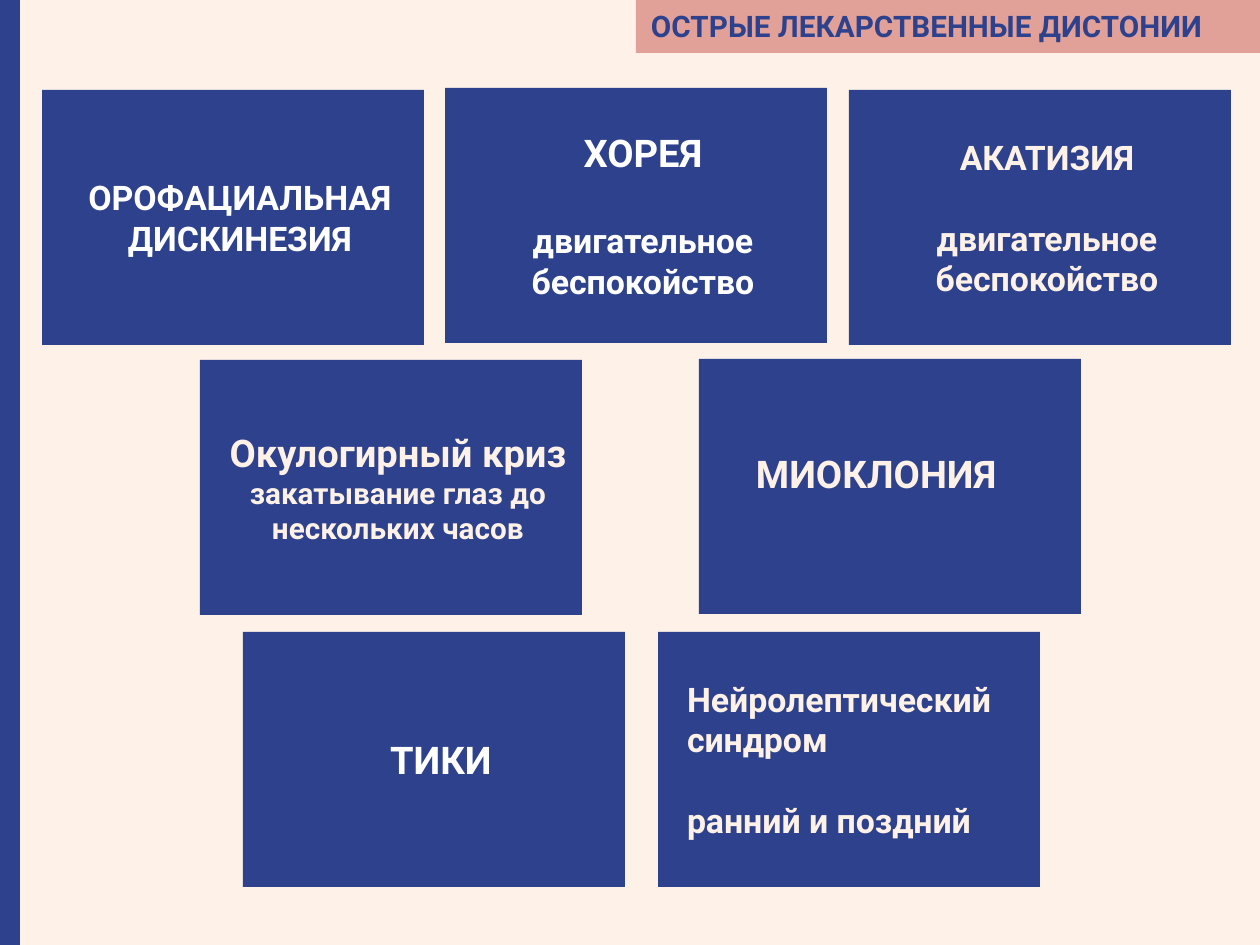
from pptx import Presentation
from pptx.dml.color import RGBColor
from pptx.enum.shapes import MSO_SHAPE
from pptx.enum.text import MSO_ANCHOR, PP_ALIGN
from pptx.util import Pt

PX = 6000
CARD_W, CARD_H = 382, 255
COLORS = {"cream": "FEF1E8", "blue": "2E418D", "pink": "E1A198", "white": "FFFFFF"}
CARDS = [
    (42, 90, "white", PP_ALIGN.CENTER, [("ОРОФАЦИАЛЬНАЯ ДИСКИНЕЗИЯ", 16, 0)]),
    (445, 88, "white", PP_ALIGN.CENTER,
     [("ХОРЕЯ", 18, 0), ("двигательное беспокойство", 16, 21)]),
    (849, 90, "cream", PP_ALIGN.CENTER,
     [("АКАТИЗИЯ", 16, 0), ("двигательное беспокойство", 16, 19)]),
    (200, 360, "cream", PP_ALIGN.CENTER,
     [("Окулогирный криз", 18, 0), ("закатывание глаз до нескольких часов", 14, 0)]),
    (699, 359, "cream", PP_ALIGN.LEFT, []),
    (243, 632, "white", PP_ALIGN.CENTER, [("ТИКИ", 18, 0)]),
    (658, 632, "cream", PP_ALIGN.LEFT,
     [("Нейролептический синдром", 16, 0), ("ранний и поздний", 16, 19)]),
]


def px(*lengths):
    """Turn px lengths into EMU."""
    return [n * PX for n in lengths]


def color(name):
    """Return a palette colour."""
    return RGBColor.from_string(COLORS[name])


def add_rect(slide, box, fill):
    """Add a plain filled rectangle."""
    sp = slide.shapes.add_shape(MSO_SHAPE.RECTANGLE, *px(*box))
    sp.shadow.inherit = False
    sp.fill.solid()
    sp.fill.fore_color.rgb = color(fill)
    sp.line.fill.background()
    return sp


def write(sp, lines, ink, align=PP_ALIGN.LEFT, anchor=MSO_ANCHOR.MIDDLE,
          margins=(15, 8, 15, 8), spacing=None, wrap=True):
    """Write (text, size, space before) lines into a shape."""
    tf = sp.text_frame
    tf.word_wrap = wrap
    tf.vertical_anchor = anchor
    tf.margin_left, tf.margin_top, tf.margin_right, tf.margin_bottom = px(*margins)
    for i, (text, size, before) in enumerate(lines):
        p = tf.add_paragraph() if i else tf.paragraphs[0]
        p.alignment = align
        p.space_before = Pt(before)
        p.line_spacing = spacing
        r = p.add_run()
        r.text = text
        r.font.name = "Roboto"
        r.font.size = Pt(size)
        r.font.bold = True
        r.font.color.rgb = color(ink)


def add_header(slide, box):
    """Add the title band."""
    write(add_rect(slide, box, "pink"), [("ОСТРЫЕ ЛЕКАРСТВЕННЫЕ ДИСТОНИИ", 14, 0)],
          "blue", margins=(15, 3, 0, 0), spacing=0.93)


def add_card(slide, box, ink, align, lines):
    """Add one symptom card."""
    write(add_rect(slide, box, "blue"), lines, ink, align, margins=(29, 8, 15, 8))


def add_label(slide, box, text):
    """Add a free label over a card."""
    sp = slide.shapes.add_textbox(*px(*box))
    write(sp, [(text, 18, 0)], "cream", anchor=MSO_ANCHOR.TOP, wrap=False)


def main():
    """Build and save the slide."""
    prs = Presentation()
    prs.slide_width, prs.slide_height = px(1260, 945)
    s = prs.slides.add_slide(prs.slide_layouts[6])
    s.background.fill.solid()
    s.background.fill.fore_color.rgb = color("cream")
    add_rect(s, (0, 0, 20, 945), "blue")
    add_header(s, (636, 0, 624, 53))
    for x, y, ink, align, lines in CARDS:
        add_card(s, (x, y, CARD_W, CARD_H), ink, align, lines)
    add_label(s, (741, 442, 299, 61), "МИОКЛОНИЯ")
    prs.save("out.pptx")


if __name__ == "__main__":
    main()
